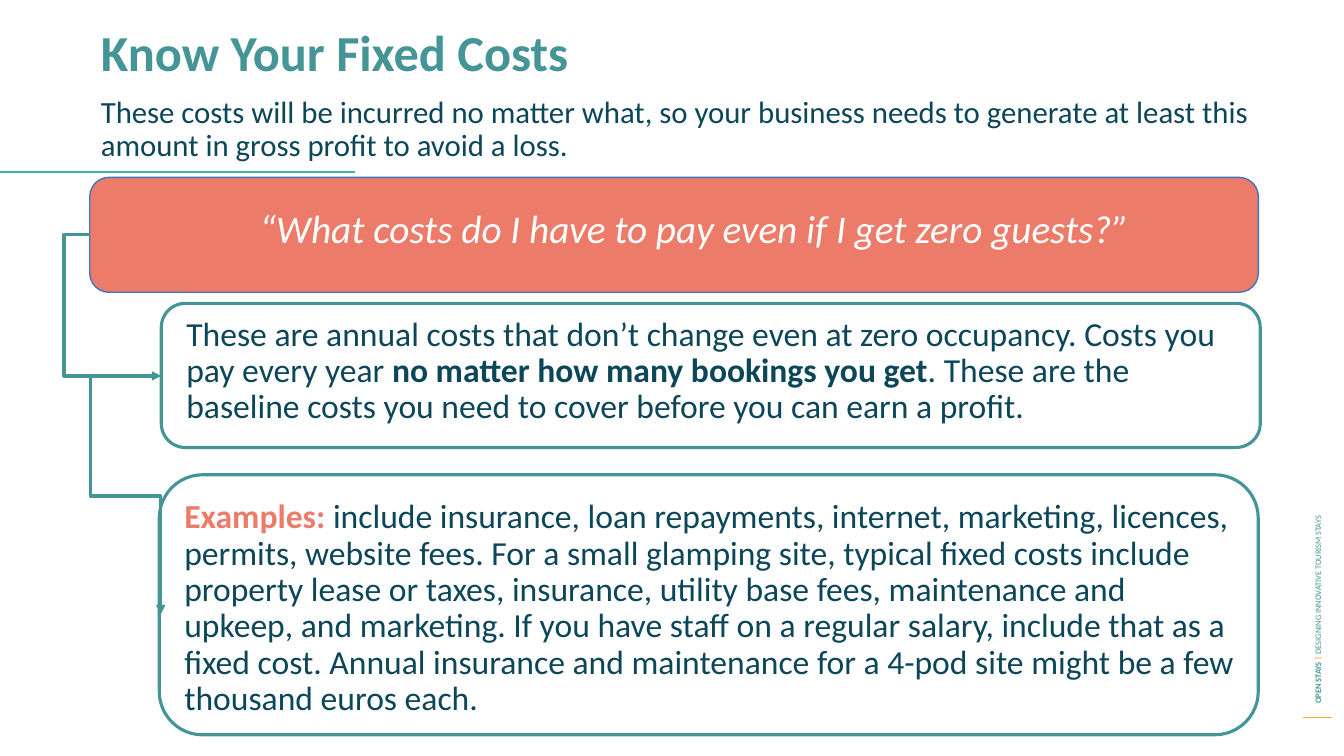
import pptx
import pptx.util
import pptx.dml.color
import pptx.enum.dml
import pptx.enum.shapes
import pptx.enum.text
import pptx.oxml
import pptx.oxml.ns

Inches = pptx.util.Inches
Pt = pptx.util.Pt
ALIGN = pptx.enum.text.PP_ALIGN
ANCHOR = pptx.enum.text.MSO_ANCHOR
CONNECTOR = pptx.enum.shapes.MSO_CONNECTOR

COLORS = {
    "teal": "459597",
    "navy": "0C4659",
    "coral": "EC7C69",
    "blue": "4174BA",
    "green": "3FB5A1",
    "amber": "FBA63D",
    "white": "FFFFFF",
}


def rgb(name):
    return pptx.dml.color.RGBColor.from_string(COLORS[name])


def format_paragraph(p, size, color=None, align=ALIGN.LEFT, spacing=0.9):
    p.alignment = align
    p.line_spacing = spacing
    p.space_before = Pt(0)
    p.font.name = "Calibri"
    p.font.size = Pt(size)
    if color:
        p.font.color.rgb = rgb(color)


def add_runs(p, runs):
    for text, color, bold in runs:
        r = p.add_run()
        r.text = text
        r.font.color.rgb = rgb(color)
        r.font.bold = bold


def add_text(s, x, y, w, h, runs, size, align=ALIGN.LEFT, spacing=0.9):
    tb = s.shapes.add_textbox(Inches(x), Inches(y), Inches(w), Inches(h))
    tf = tb.text_frame
    tf.word_wrap = True
    p = tf.paragraphs[0]
    format_paragraph(p, size, align=align, spacing=spacing)
    add_runs(p, runs)
    return tb


def add_panel(s, x, y, w, h, line, width, fill=None):
    kind = pptx.enum.shapes.MSO_SHAPE.FLOWCHART_ALTERNATE_PROCESS
    sp = s.shapes.add_shape(kind, Inches(x), Inches(y), Inches(w), Inches(h))
    sp.shadow.inherit = False
    if fill:
        sp.fill.solid()
        sp.fill.fore_color.rgb = rgb(fill)
    else:
        sp.fill.background()
    sp.line.color.rgb = rgb(line)
    sp.line.width = Pt(width)


def add_line(s, x1, y1, x2, y2, color, width, kind=CONNECTOR.STRAIGHT):
    cx = s.shapes.add_connector(kind, Inches(x1), Inches(y1), Inches(x2), Inches(y2))
    cx.line.color.rgb = rgb(color)
    cx.line.width = Pt(width)
    pptx.oxml.ns.qn("a:effectLst")
    spPr = cx._element.spPr
    spPr.append(pptx.oxml.parse_xml(f"<a:effectLst {pptx.oxml.ns.nsdecls('a')}/>"))
    return cx


def add_elbow(s, x1, y1, x2, y2, bend, rotation=0):
    cx = add_line(s, x1, y1, x2, y2, "teal", 2.25, CONNECTOR.ELBOW)
    ns = pptx.oxml.ns.nsdecls("a")
    spPr = cx._element.spPr
    spPr.find(pptx.oxml.ns.qn("a:ln")).append(
        pptx.oxml.parse_xml(f'<a:tailEnd {ns} type="triangle"/>'))
    guides = spPr.find(pptx.oxml.ns.qn("a:prstGeom")).get_or_add_avLst()
    guides.append(pptx.oxml.parse_xml(
        f'<a:gd {ns} name="adj1" fmla="val {round(bend * 100000)}"/>'))
    if rotation:
        spPr.find(pptx.oxml.ns.qn("a:xfrm")).set("rot", str(rotation * 60000))


def add_heading(s, x, y, w, h):
    title = s.shapes.title
    title.left, title.top = Inches(x), Inches(y)
    title.width, title.height = Inches(w), Inches(h)
    tf = title.text_frame
    tf.word_wrap = True
    tf.auto_size = pptx.enum.text.MSO_AUTO_SIZE.NONE
    tf.vertical_anchor = ANCHOR.TOP
    p = tf.paragraphs[0]
    p.text = "Know Your Fixed Costs"
    format_paragraph(p, 36, "teal")
    p.font.bold = True
    p = tf.add_paragraph()
    p.text = ("These costs will be incurred no matter what, so your business needs "
              "to generate at least this amount in gross profit to avoid a loss.")
    format_paragraph(p, 22, "navy")
    p.space_before = Pt(10)


def add_question(s, x, y, w, h):
    add_panel(s, x, y, w, h, "blue", 1, "coral")
    question = "“What costs do I have to pay even if I get zero guests?”"
    tb = add_text(s, x + 0.2, y + 0.27, w, h - 0.27,
                  [(question, "white", False)], 28, ALIGN.CENTER)
    tb.text_frame.paragraphs[0].font.italic = True


def add_answer(s, x, y, w, h, text_top, runs):
    add_panel(s, x, y, w, h, "teal", 2.25)
    add_text(s, x + 0.15, y + text_top, 10.63, h - text_top, runs, 24)


def add_side_label(s, x, y, length, thickness):
    runs = [("OPEN STAYS ", "teal", True),
            ("| ", "amber", True),
            ("DESIGNING INNOVATIVE TOURISM STAYS", "teal", False)]
    tb = add_text(s, x + (thickness - length) / 2, y + (length - thickness) / 2,
                  length, thickness, runs, 6, spacing=1.0)
    tb.rotation = 270
    tb.text_frame.vertical_anchor = ANCHOR.MIDDLE
    add_line(s, x - 0.05, y + length + 0.04, x + 0.24, y + length + 0.04, "amber", 0.75)


def main():
    prs = pptx.Presentation()
    prs.slide_width, prs.slide_height = Inches(13.33), Inches(7.5)
    s = prs.slides.add_slide(prs.slide_layouts.get_by_name("Title Only"))

    add_side_label(s, 12.97, 1.31, 5.77, 0.2)
    add_heading(s, 0.9, 0.23, 11.98, 1.4)
    add_line(s, 0, 1.71, 3.52, 1.71, "green", 1.5)
    add_question(s, 0.89, 1.76, 11.59, 1.14)
    add_answer(s, 1.6, 3.01, 10.9, 1.43, 0.09, [
        ("These are annual costs that don’t change even at zero occupancy. "
         "Costs you pay every year ", "navy", False),
        ("no matter how many bookings you get", "navy", True),
        (". These are the baseline costs you need to cover before you can "
         "earn a profit.", "navy", False),
    ])
    add_answer(s, 1.58, 4.71, 10.9, 2.58, 0.2, [
        ("Examples: ", "coral", True),
        ("include insurance, loan repayments, internet, marketing, licences, "
         "permits, website fees. For a small glamping site, typical fixed costs "
         "include property lease or taxes, insurance, utility base fees, "
         "maintenance and upkeep, and marketing. If you have staff on a regular "
         "salary, include that as a fixed cost. Annual insurance and maintenance "
         "for a 4-pod site might be a few thousand euros each.", "navy", False),
    ])
    add_elbow(s, 0.89, 2.33, 1.6, 3.73, -0.36)
    add_elbow(s, 0.07, 5.27, 2.42, 4.57, 0.5, rotation=90)
    prs.save("out.pptx")


if __name__ == "__main__":
    main()
